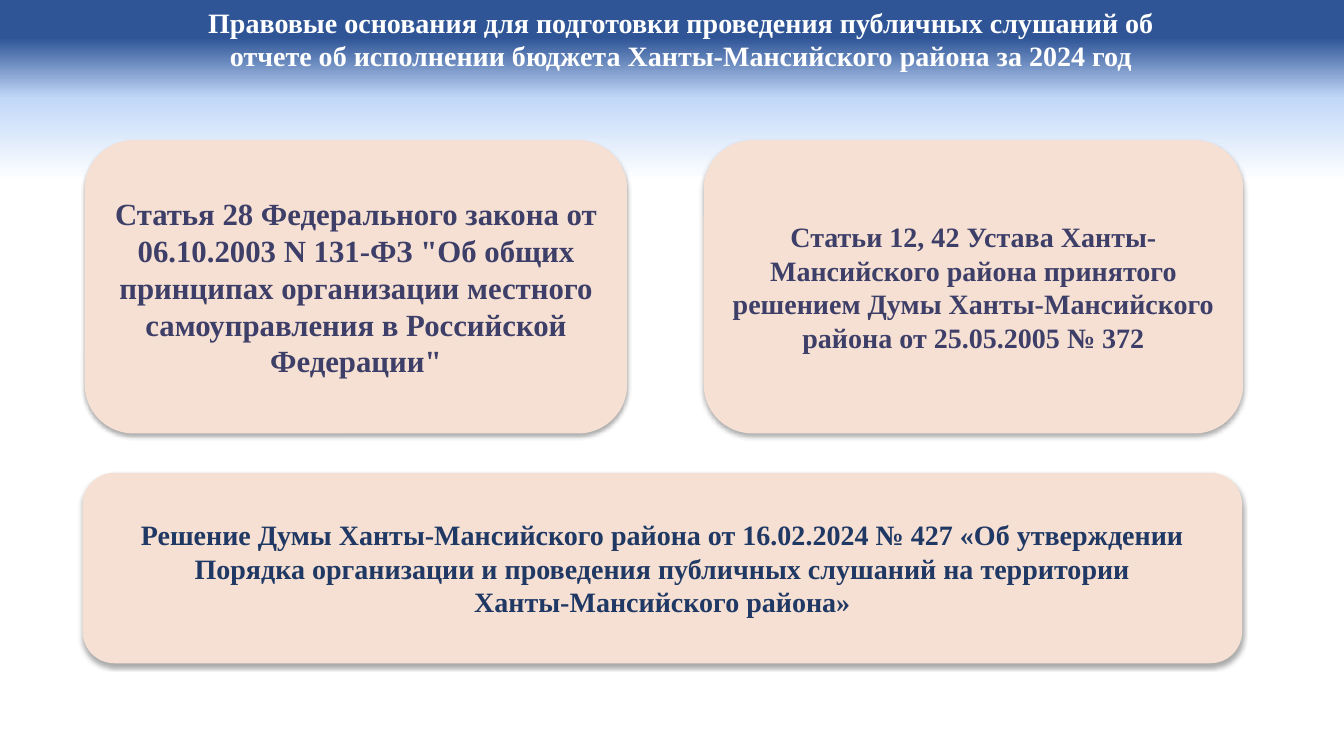
from dataclasses import dataclass

from lxml.etree import SubElement
from pptx import Presentation
from pptx.dml.color import RGBColor
from pptx.enum.shapes import MSO_SHAPE
from pptx.enum.text import MSO_ANCHOR, MSO_AUTO_SIZE, PP_ALIGN
from pptx.oxml.ns import qn
from pptx.util import Pt

EMU_PER_PX = 9144  # 100 px to the inch


@dataclass(frozen=True)
class Theme:
    font: str = "Times New Roman"
    sky: tuple = ((5, "2F5597"), (13, "C2D8F8"), (24, "FFFFFF"))
    title: str = "FFFFFF"
    card: str = "F5E0D3"
    law: str = "3E3F68"
    decision: str = "203864"
    shadow: str = "000000"
    body_size: int = 20
    large_size: int = 22


THEME = Theme()


def px(length):
    return length * EMU_PER_PX


def write_centred(frame, text, size, color, anchor):
    frame.text = text
    frame.word_wrap = True
    frame.vertical_anchor = anchor
    for paragraph in frame.paragraphs:
        paragraph.alignment = PP_ALIGN.CENTER
        for run in paragraph.runs:
            run.font.name = THEME.font
            run.font.size = Pt(size)
            run.font.bold = True
            run.font.color.rgb = RGBColor.from_string(color)


def paint_background(slide):
    sky = slide.background.fill
    sky.gradient()
    sky.gradient_angle = 270  # top to bottom
    stops = next(slide.element.iter(qn("a:gsLst")))
    for stop in list(stops):
        stops.remove(stop)
    for percent, color in THEME.sky:
        stop = SubElement(stops, qn("a:gs"), pos=str(percent * 1000))
        SubElement(stop, qn("a:srgbClr"), val=color)


def add_soft_shadow(card):
    card.shadow.inherit = False
    effects = card.element.spPr.find(qn("a:effectLst"))
    shadow = SubElement(effects, qn("a:outerShdw"), blurRad=str(Pt(3.5)),
                        dist=str(Pt(2.2)), dir="5400000", rotWithShape="0")
    color = SubElement(shadow, qn("a:srgbClr"), val=THEME.shadow)
    SubElement(color, qn("a:alpha"), val="32000")


def place_title(slide, box, text):
    title = slide.shapes.title
    title.left, title.top, title.width, title.height = map(px, box)
    write_centred(title.text_frame, text, THEME.body_size, THEME.title, MSO_ANCHOR.TOP)
    title.text_frame.auto_size = MSO_AUTO_SIZE.SHAPE_TO_FIT_TEXT


def add_card(slide, box, text, size, color):
    card = slide.shapes.add_shape(MSO_SHAPE.ROUNDED_RECTANGLE, *map(px, box))
    card.fill.solid()
    card.fill.fore_color.rgb = RGBColor.from_string(THEME.card)
    card.line.fill.background()
    add_soft_shadow(card)
    write_centred(card.text_frame, text, size, color, MSO_ANCHOR.MIDDLE)


def build_legal_grounds(slide):
    paint_background(slide)
    place_title(slide, (185, 0, 981, 77),
                "Правовые основания для подготовки проведения публичных слушаний об "
                "отчете об исполнении бюджета Ханты-Мансийского района за 2024 год")

    # Federal law and district charter, side by side
    add_card(slide, (84, 139, 538, 291),
             "Статья 28 Федерального закона от 06.10.2003 N 131-ФЗ \"Об общих принципах "
             "организации местного самоуправления в Российской Федерации\"",
             THEME.large_size, THEME.law)
    add_card(slide, (698, 139, 535, 291),
             "Статьи 12, 42 Устава Ханты-Мансийского района принятого решением Думы "
             "Ханты-Мансийского района от 25.05.2005 № 372",
             THEME.body_size, THEME.law)

    # Decision of the district council
    add_card(slide, (82, 469, 1150, 189),
             "Решение Думы Ханты-Мансийского района от 16.02.2024 № 427 «Об утверждении "
             "Порядка организации и проведения публичных слушаний на территории\n"
             "Ханты-Мансийского района»",
             THEME.body_size, THEME.decision)


def main():
    deck = Presentation()
    deck.slide_width, deck.slide_height = px(1333), px(750)
    title_only = deck.slide_layouts.get_by_name("Title Only")
    build_legal_grounds(deck.slides.add_slide(title_only))
    deck.save("out.pptx")


if __name__ == "__main__":
    main()
